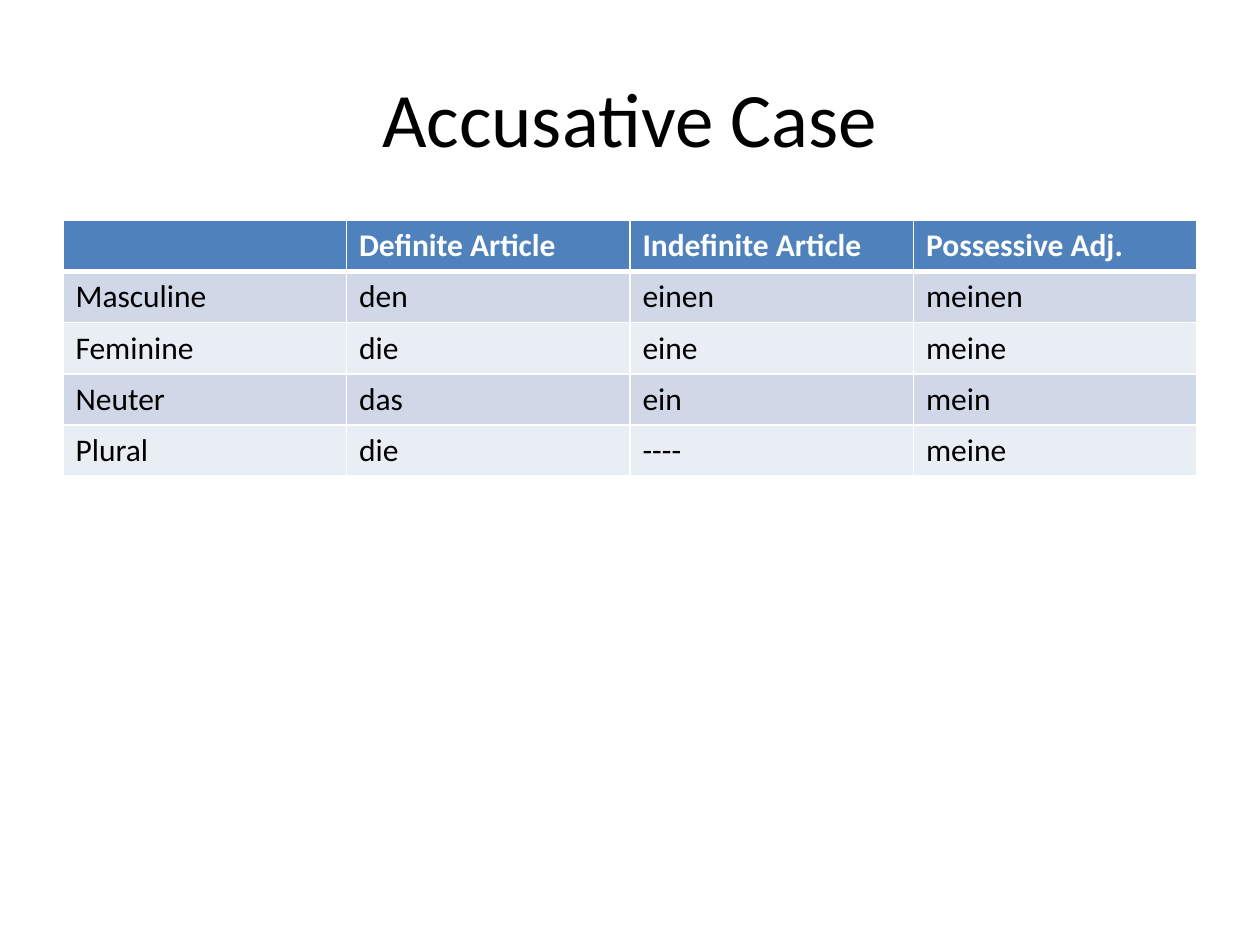
from dataclasses import dataclass

from lxml.etree import SubElement
from pptx import Presentation
from pptx.dml.color import RGBColor
from pptx.enum.text import MSO_ANCHOR, PP_ALIGN
from pptx.oxml.ns import qn
from pptx.slide import Slide
from pptx.table import _Cell
from pptx.text.text import _Paragraph
from pptx.util import Emu, Pt

EMU_PER_PX = 4572
FONT = "Calibri"
COLORS = {
    "header": "4F81BD",
    "odd_row": "D0D8E8",
    "even_row": "E9EDF4",
    "white": "FFFFFF",
    "black": "000000",
}
ARTICLES = [
    ["", "Definite Article", "Indefinite Article", "Possessive Adj."],
    ["Masculine", "den", "einen", "meinen"],
    ["Feminine", "die", "eine", "meine"],
    ["Neuter", "das", "ein", "mein"],
    ["Plural", "die", "----", "meine"],
]


@dataclass(frozen=True)
class RowStyle:
    fill: str
    text: str
    bold: bool
    top: int = 1
    bottom: int = 1


HEADER = RowStyle("header", "white", True, bottom=3)
BODY = [
    RowStyle("odd_row", "black", False, top=3),
    RowStyle("even_row", "black", False),
    RowStyle("odd_row", "black", False),
    RowStyle("even_row", "black", False),
]


def px(length: int) -> Emu:
    return Emu(length * EMU_PER_PX)


def style_paragraph(para: _Paragraph, size: int, color: str, bold: bool) -> None:
    para.font.name = FONT
    para.font.size = Pt(size)
    para.font.bold = bold
    para.font.color.rgb = RGBColor.from_string(COLORS[color])


def add_borders(cell: _Cell, style: RowStyle) -> None:
    properties = cell._tc.get_or_add_tcPr()
    widths = {"a:lnL": 1, "a:lnR": 1, "a:lnT": style.top, "a:lnB": style.bottom}
    for tag, width in widths.items():
        line = SubElement(properties, qn(tag), w=str(Pt(width)))
        fill = SubElement(line, qn("a:solidFill"))
        SubElement(fill, qn("a:srgbClr"), val=COLORS["white"])


def fill_cell(cell: _Cell, text: str, style: RowStyle) -> None:
    add_borders(cell, style)
    cell.fill.solid()
    cell.fill.fore_color.rgb = RGBColor.from_string(COLORS[style.fill])
    cell.text = text
    style_paragraph(cell.text_frame.paragraphs[0], 18, style.text, style.bold)


def add_title(slide: Slide, text: str) -> None:
    title = slide.shapes.title
    title.left, title.top = px(100), px(60)
    title.width, title.height = px(1800), px(250)
    title.text_frame.text = text
    title.text_frame.vertical_anchor = MSO_ANCHOR.MIDDLE
    para = title.text_frame.paragraphs[0]
    para.alignment = PP_ALIGN.CENTER
    style_paragraph(para, 44, "black", False)


def add_article_table(slide: Slide) -> None:
    row_count, column_count = len(ARTICLES), len(ARTICLES[0])
    table = slide.shapes.add_table(
        row_count, column_count, px(100), px(350), px(1800), px(81 * row_count)
    ).table
    for row, words, style in zip(table.rows, ARTICLES, [HEADER, *BODY]):
        for cell, word in zip(row.cells, words):
            fill_cell(cell, word, style)


def main() -> None:
    deck = Presentation()
    deck.slide_width, deck.slide_height = px(2000), px(1500)
    slide = deck.slides.add_slide(deck.slide_layouts[5])
    add_title(slide, "Accusative Case")
    add_article_table(slide)
    deck.save("out.pptx")


if __name__ == "__main__":
    main()
